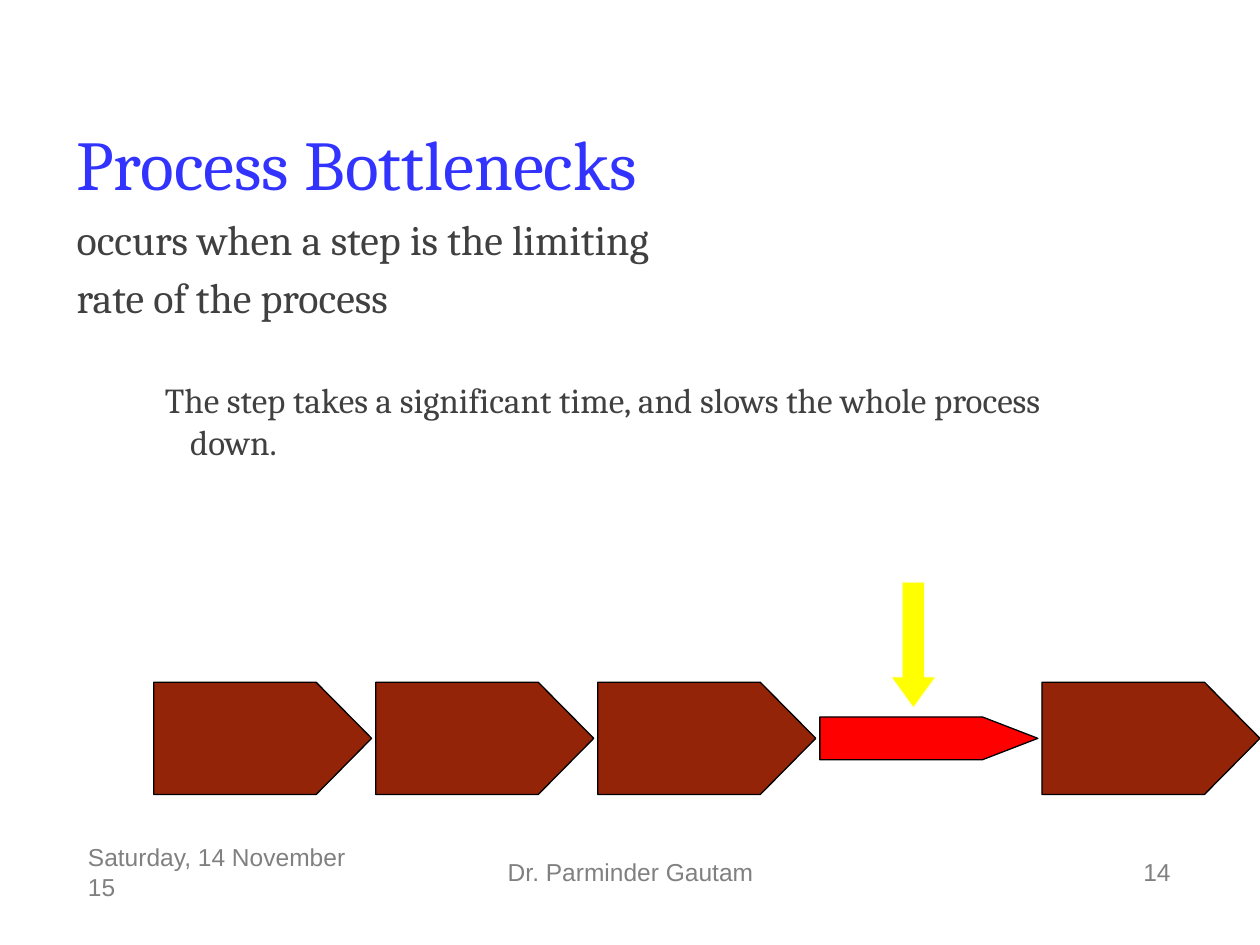
from dataclasses import dataclass

from pptx import Presentation
from pptx.dml.color import RGBColor
from pptx.enum.shapes import MSO_SHAPE
from pptx.enum.text import MSO_ANCHOR, PP_ALIGN
from pptx.util import Inches, Pt


@dataclass(frozen=True)
class Theme:
    body_font: str = "Cambria"
    footer_font: str = "Arial"
    title: str = "3333FF"
    text: str = "404040"
    footer: str = "808080"
    step: str = "942408"
    bottleneck: str = "FF0000"
    arrow: str = "FFFF00"
    arrow_line: str = "FFFEE6"
    line: str = "000000"
    title_size: int = 40
    lead_size: int = 24
    detail_size: int = 20
    footer_size: int = 14


@dataclass(frozen=True)
class Line:
    text: str
    size: int
    color: str
    before: float = 0
    margin: float = 0.25
    indent: float = -0.25


@dataclass(frozen=True)
class Footer:
    text: str
    left: float
    width: float
    align: PP_ALIGN


@dataclass(frozen=True)
class Step:
    height: float
    color: str


T = Theme()
SLIDE_W, SLIDE_H = 10, 7.5

LINES = [
    Line("Process Bottlenecks", T.title_size, T.title),
    Line("occurs when a step is the limiting", T.lead_size, T.text, 4.8),
    Line("rate of the process", T.lead_size, T.text, 4.8),
    Line("The step takes a significant time, and slows the whole process down.",
         T.detail_size, T.text, 32, 0.9, -0.2),
]
FOOTERS = [
    Footer("Saturday, 14 November 15", 0.6, 2.33, PP_ALIGN.LEFT),
    Footer("Dr. Parminder Gautam", 3.42, 3.17, PP_ALIGN.CENTER),
    Footer("14", 7.06, 2.33, PP_ALIGN.RIGHT),
]
NORMAL = Step(0.89, T.step)
STEPS = [NORMAL, NORMAL, NORMAL, Step(0.34, T.bottleneck), NORMAL]

# The chain of steps ends at the right edge of the slide
STEP_LEFT, STEP_W, STEP_MID, STEP_POINT = 1.22, 1.73, 5.86, 0.44
STEP_PITCH = (SLIDE_W - STEP_W - STEP_LEFT) / (len(STEPS) - 1)


def add_text_frame(s, left: float, top: float, width: float, height: float):
    tf = s.shapes.add_textbox(Inches(left), Inches(top),
                              Inches(width), Inches(height)).text_frame
    tf.word_wrap = True
    return tf


def set_font(p, name: str, size: int, color: str) -> None:
    p.font.name = name
    p.font.size = Pt(size)
    p.font.color.rgb = RGBColor.from_string(color)


def add_body(s, lines: list[Line]) -> None:
    tf = add_text_frame(s, 0.51, 0.91, 8.58, 5.04)
    for i, line in enumerate(lines):
        p = tf.add_paragraph() if i else tf.paragraphs[0]
        p.text = line.text
        pPr = p._p.get_or_add_pPr()
        pPr.set("marL", str(Inches(line.margin)))
        pPr.set("indent", str(Inches(line.indent)))
        if line.before:
            p.space_before = Pt(line.before)
        set_font(p, T.body_font, line.size, line.color)


def add_footer(s, footer: Footer) -> None:
    tf = add_text_frame(s, footer.left, 6.72, footer.width, 0.4)
    tf.vertical_anchor = MSO_ANCHOR.MIDDLE
    p = tf.paragraphs[0]
    p.text = footer.text
    p.alignment = footer.align
    set_font(p, T.footer_font, T.footer_size, T.footer)


def add_block(s, kind: MSO_SHAPE, left: float, top: float, width: float,
              height: float, fill: str, line: str):
    sp = s.shapes.add_shape(kind, Inches(left), Inches(top),
                            Inches(width), Inches(height))
    sp.shadow.inherit = False
    sp.fill.solid()
    sp.fill.fore_color.rgb = RGBColor.from_string(fill)
    sp.line.color.rgb = RGBColor.from_string(line)
    sp.line.width = Pt(0.75)
    return sp


def add_step(s, index: int, step: Step) -> None:
    sp = add_block(s, MSO_SHAPE.PENTAGON, STEP_LEFT + index * STEP_PITCH,
                   STEP_MID - step.height / 2, STEP_W, step.height,
                   step.color, T.line)
    sp.adjustments[0] = STEP_POINT / step.height


def main() -> None:
    prs = Presentation()
    prs.slide_width, prs.slide_height = Inches(SLIDE_W), Inches(SLIDE_H)
    s = prs.slides.add_slide(prs.slide_layouts[6])

    # Title and explanation
    add_body(s, LINES)

    # Date, author and slide number
    for footer in FOOTERS:
        add_footer(s, footer)

    # Process steps
    for i, step in enumerate(STEPS):
        add_step(s, i, step)

    # Arrow pointing at the bottleneck
    arrow = add_block(s, MSO_SHAPE.DOWN_ARROW, 7.07, 4.62, 0.36, 1,
                      T.arrow, T.arrow_line)
    arrow.adjustments[1] = 0.69

    prs.save("out.pptx")


if __name__ == "__main__":
    main()
